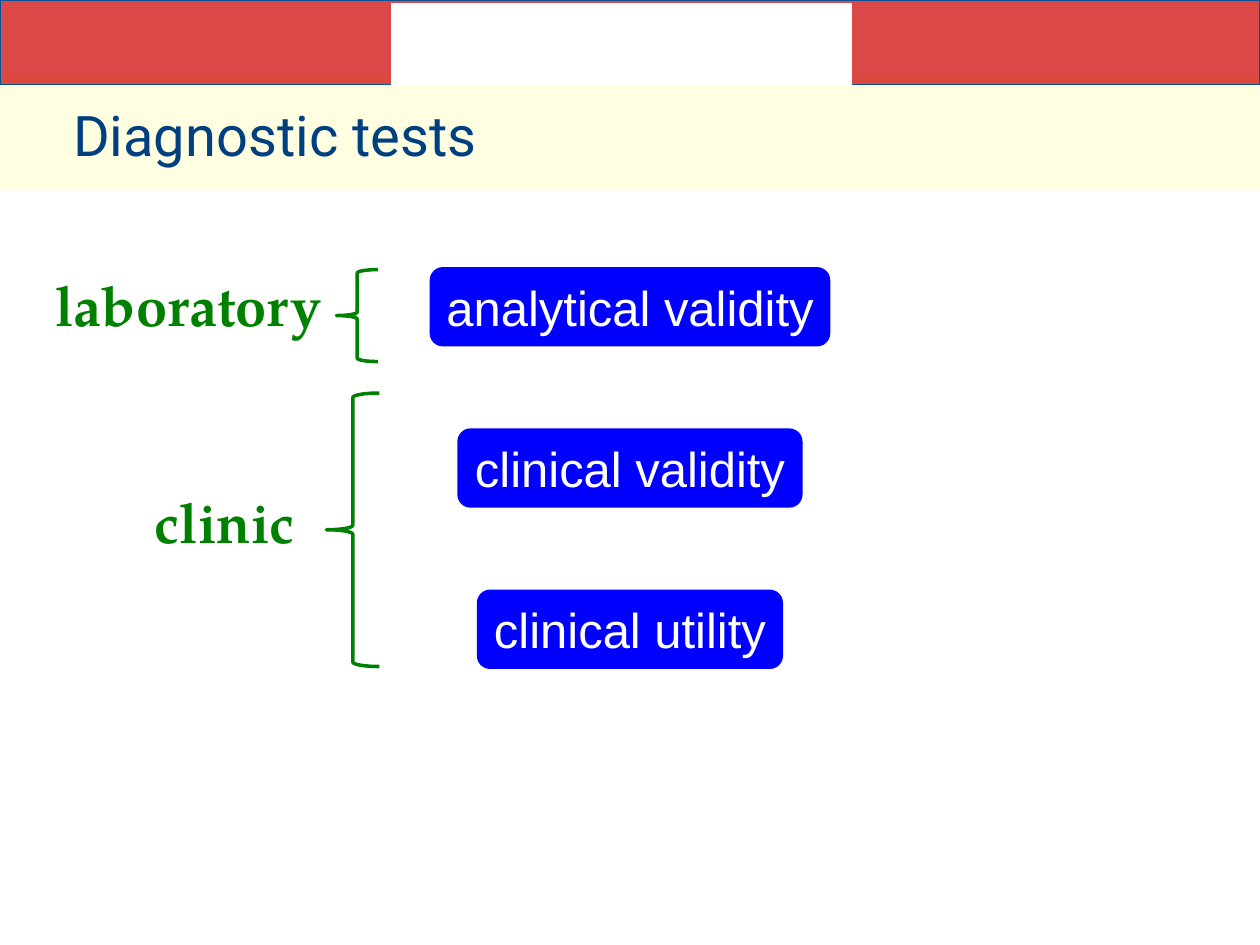
from dataclasses import dataclass

from lxml import etree
from pptx import Presentation
from pptx.dml.color import RGBColor
from pptx.enum.shapes import MSO_SHAPE
from pptx.enum.text import MSO_ANCHOR, MSO_AUTO_SIZE, PP_ALIGN
from pptx.oxml.ns import qn
from pptx.util import Inches, Pt

RECTANGLE = MSO_SHAPE.RECTANGLE
ROUNDED = MSO_SHAPE.ROUNDED_RECTANGLE
LEFT_BRACE = MSO_SHAPE.LEFT_BRACE
TOP, MIDDLE = MSO_ANCHOR.TOP, MSO_ANCHOR.MIDDLE
LEFT, CENTER = PP_ALIGN.LEFT, PP_ALIGN.CENTER
FIT_SHAPE = MSO_AUTO_SIZE.SHAPE_TO_FIT_TEXT


@dataclass(frozen=True)
class Theme:
    cream: RGBColor = RGBColor.from_string("FFFEE0")
    red: RGBColor = RGBColor.from_string("CE0202")
    band_line: RGBColor = RGBColor.from_string("095295")
    white: RGBColor = RGBColor.from_string("FFFFFF")
    navy: RGBColor = RGBColor.from_string("004080")
    blue: RGBColor = RGBColor.from_string("0000FF")
    green: RGBColor = RGBColor.from_string("008000")
    heading_size: Pt = Pt(32)
    box_size: Pt = Pt(28)
    thin: Pt = Pt(0.75)
    brace_line: Pt = Pt(2)


theme = Theme()
prs = Presentation()
prs.slide_width, prs.slide_height = Inches(10), Inches(7.5)
slide = prs.slides.add_slide(prs.slide_layouts[5])


def add_shape(kind, box, fill=None, line=None, width=theme.thin):
    shape = slide.shapes.add_shape(kind, *map(Inches, box))
    shape.shadow.inherit = False
    if fill is None:
        shape.fill.background()
    else:
        shape.fill.solid()
        shape.fill.fore_color.rgb = fill
    if line is None:
        shape.line.fill.background()
    else:
        shape.line.color.rgb = line
        shape.line.width = width
    return shape


def set_text(shape, text, font, size, color, align=LEFT, anchor=TOP, bold=False, wrap=False):
    frame = shape.text_frame
    frame.text = text
    frame.word_wrap = wrap
    frame.auto_size = FIT_SHAPE
    frame.vertical_anchor = anchor
    paragraph = frame.paragraphs[0]
    paragraph.alignment = align
    paragraph.font.name = font
    paragraph.font.size = size
    paragraph.font.bold = bold
    paragraph.font.color.rgb = color


add_shape(RECTANGLE, (0, 0.59, 10, 0.92), theme.cream)
red_band = add_shape(RECTANGLE, (0, 0, 10, 0.67), theme.red, theme.band_line)
red_color = red_band.fill._xPr.find(qn("a:solidFill"))[0]
etree.SubElement(red_color, qn("a:alpha")).set("val", "72000")
add_shape(RECTANGLE, (3.11, 0.03, 3.65, 0.64), theme.white, theme.white)

title = slide.shapes.title
slide.shapes._spTree.append(title._element)
title.left, title.top = Inches(0.58), Inches(0.75)
title.width, title.height = Inches(8.83), Inches(0.52)
set_text(title, "Diagnostic tests", "Roboto", theme.heading_size, theme.navy, wrap=True)
title.text_frame.margin_left = title.text_frame.margin_right = 0
title.text_frame.margin_top, title.text_frame.margin_bottom = Inches(0.05), 0

criteria = [("analytical validity", 3.18), ("clinical validity", 2.74), ("clinical utility", 2.43)]
for row, (criterion, width) in enumerate(criteria):
    criterion_box = add_shape(ROUNDED, (5 - width / 2, 2.12 + 1.28 * row, width, 0.63), theme.blue)
    set_text(criterion_box, criterion, "Arial", theme.box_size, theme.white, CENTER, MIDDLE)

settings = [
    ("laboratory", (0.34, 2.1, 2.4, 0.64), (2.67, 2.14, 0.33, 0.73)),
    ("clinic", (1.13, 3.82, 1.35, 0.64), (2.59, 3.12, 0.42, 2.17)),
]
for setting, label_box, brace_box in settings:
    add_shape(LEFT_BRACE, brace_box, line=theme.green, width=theme.brace_line)
    label = slide.shapes.add_textbox(*map(Inches, label_box))
    set_text(label, setting, "TeX Gyre Pagella", theme.heading_size, theme.green, bold=True)

prs.save("out.pptx")
